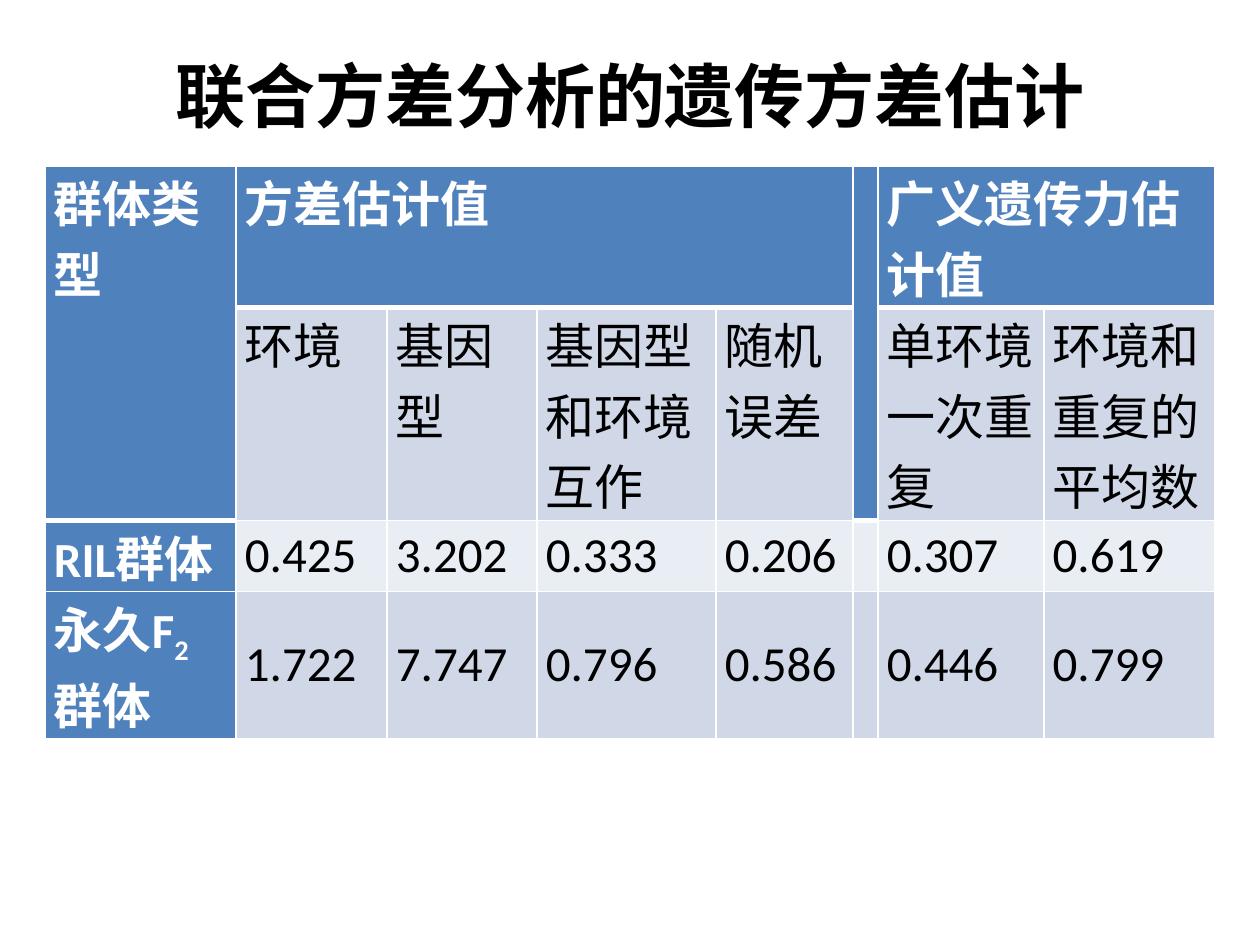
from lxml.etree import SubElement as Sub
from pptx import Presentation
from pptx.dml.color import RGBColor as Rgb
from pptx.enum.text import MSO_ANCHOR as Anchor, MSO_AUTO_SIZE as Auto, PP_ALIGN as Align
from pptx.oxml.ns import qn
from pptx.util import Emu, Pt

HUES = {"ink": "000000", "white": "FFFFFF", "head": "4F81BD", "dark": "D0D8E8", "light": "E9EDF4"}
COLS = [191, 151, 150, 179, 137, 25, 166, 171]
ROWS = [140, 213, 71, 146]
GAP = 5
TEXTS = [
    ["群体类型", "方差估计值", "", "", "", "", "广义遗传力估计值", ""],
    ["", "环境", "基因型", "基因型和环境互作", "随机误差", "", "单环境一次重复", "环境和重复的平均数"],
    ["RIL群体", "0.425", "3.202", "0.333", "0.206", "", "0.307", "0.619"],
    ["永久F_2_群体", "1.722", "7.747", "0.796", "0.586", "", "0.446", "0.799"],
]
SPANS = [((0, 0), (1, 0)), ((0, 1), (0, 4)), ((0, GAP), (1, GAP)), ((0, 6), (0, 7))]


def px(num):
    """Turn pixels into EMU."""
    return Emu(round(num * 914400 / 126))


def style(item, form):
    """Set each attribute named in a dict of format values."""
    for key, val in form.items():
        setattr(item, key, val)


def write(para, text, hue, form):
    """Write text whose odd parts between underscores are subscripts."""
    for num, part in enumerate(text.split("_")):
        run = para.add_run()
        run.text = part
        style(run.font, form)
        run.font.color.rgb = Rgb.from_string(HUES[hue])
        if num % 2:
            run._r.get_or_add_rPr().set("baseline", "-25000")


def edge(cell, row, tall):
    """Draw white cell borders, thick below the header cells."""
    thick = {"T": row == (2 if tall else 1), "B": row == (1 if tall else 0)}
    prop = cell._tc.get_or_add_tcPr()
    for side in "LRTB":
        line = Sub(prop, qn(f"a:ln{side}"), w=str(Pt(3 if thick.get(side) else 1)))
        Sub(Sub(line, qn("a:solidFill")), qn("a:srgbClr"), val=HUES["white"])


def shade(row, col):
    """Pick the fill of a cell from its place in the grid."""
    if row == 0 or col == 0 or (row == 1 and col == GAP):
        return "head"
    return "light" if row == 2 else "dark"


def title(slide, left, top, wide, high):
    """Place and format the slide title."""
    box = slide.shapes.title
    style(box, {"left": px(left), "top": px(top), "width": px(wide), "height": px(high)})
    frame = box.text_frame
    style(frame, {"word_wrap": True, "auto_size": Auto.NONE, "vertical_anchor": Anchor.MIDDLE})
    para = frame.paragraphs[0]
    para.alignment = Align.CENTER
    face = "Noto Sans CJK SC"
    write(para, "联合方差分析的遗传方差估计", "ink", {"size": Pt(40), "bold": True, "name": face})
    Sub(para.runs[0]._r.get_or_add_rPr(), qn("a:ea"), typeface=face)


def fill(cell, row, col):
    """Format one cell and write its text."""
    tone = shade(row, col)
    data = row > 1 and col > 0
    edge(cell, row, col in (0, GAP))
    style(cell, {"margin_left": px(9), "margin_right": px(9), "margin_top": 0, "margin_bottom": 0,
                 "vertical_anchor": Anchor.MIDDLE if data else Anchor.TOP})
    cell.fill.solid()
    cell.fill.fore_color.rgb = Rgb.from_string(HUES[tone])
    text = TEXTS[row][col]
    if text:
        para = cell.text_frame.paragraphs[0]
        para.alignment = Align.JUSTIFY if data else Align.LEFT
        head = tone == "head"
        write(para, text, "white" if head else "ink",
              {"size": Pt(28), "bold": head, "name": "Calibri"})


def grid(slide, left, top):
    """Build the table of variance estimates."""
    frame = slide.shapes.add_table(len(ROWS), len(COLS), px(left), px(top), px(sum(COLS)), px(sum(ROWS)))
    table = frame.table
    style(table, {"first_row": False, "horz_banding": False})
    for col, wide in zip(table.columns, COLS):
        col.width = px(wide)
    for row, high in zip(table.rows, ROWS):
        row.height = px(high)
    for start, end in SPANS:
        table.cell(*start).merge(table.cell(*end))
    for row in range(len(ROWS)):
        for col in range(len(COLS)):
            fill(table.cell(row, col), row, col)


def main():
    """Build the slide and save it."""
    deck = Presentation()
    style(deck, {"slide_width": px(1260), "slide_height": px(945)})
    slide = deck.slides.add_slide(deck.slide_layouts[5])
    title(slide, 63, 45, 1134, 100)
    grid(slide, 45, 166)
    deck.save("out.pptx")


if __name__ == "__main__":
    main()
